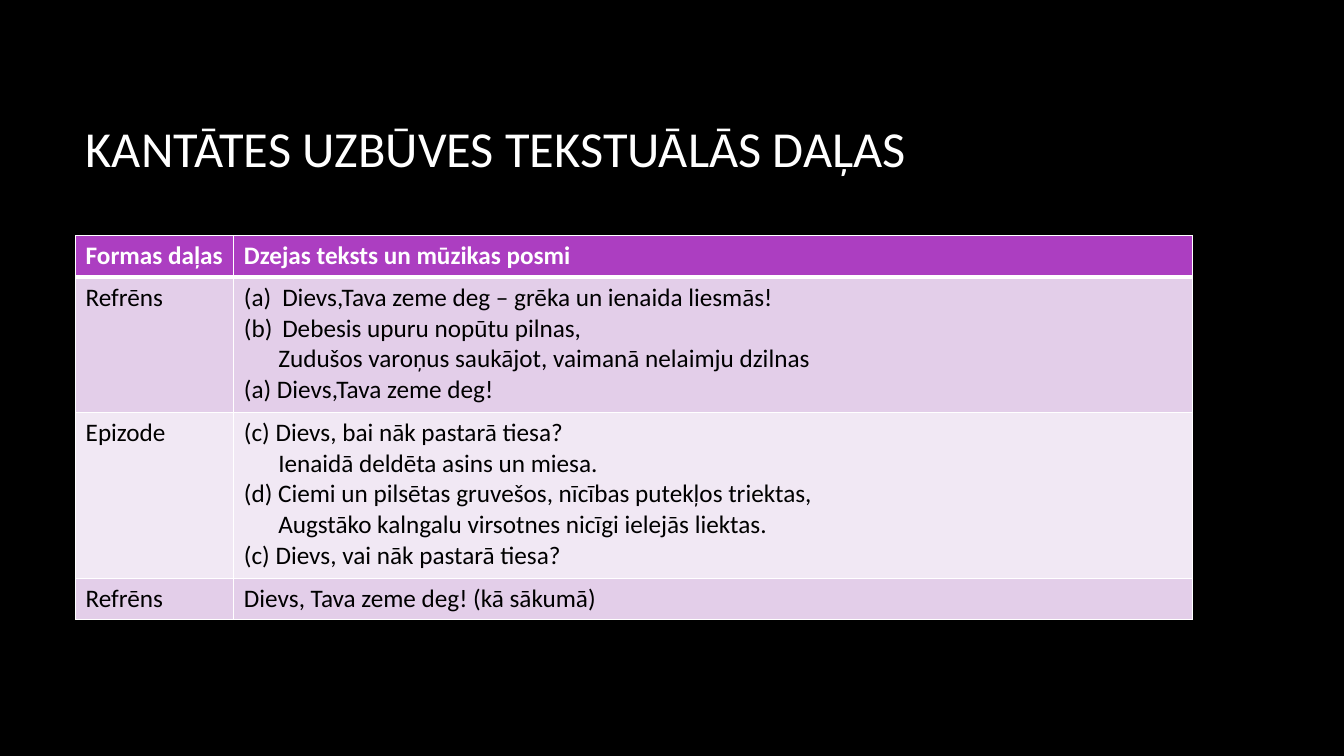
from dataclasses import dataclass

from lxml.etree import SubElement
from pptx import Presentation
from pptx.dml.color import RGBColor
from pptx.enum.text import MSO_ANCHOR, PP_ALIGN
from pptx.oxml.ns import qn
from pptx.util import Inches, Pt


@dataclass(frozen=True)
class Theme:
    font: str = "Calibri"
    background: str = "000000"
    light: str = "FFFFFF"
    dark: str = "000000"
    header: str = "AC3EC1"
    refrain: str = "E3CEE9"
    episode: str = "F1E8F4"
    title_size: int = 36
    body_size: int = 18
    border: int = 1
    header_border: int = 3


@dataclass(frozen=True)
class Line:
    text: str
    numbered: bool = False
    indented: bool = False


@dataclass(frozen=True)
class Section:
    label: str
    lines: tuple[Line, ...]
    fill: str
    is_header: bool = False


THEME = Theme()
LEFT, WIDTH = 0.75, 11.08
COLUMNS = (1.57, 9.51)
LINE_HEIGHT, CELL_MARGINS = 0.31, 0.1
NUMBER_INDENT, VERSE_INDENT = 0.38, 0.34

SECTIONS = (
    Section("Formas daļas", (Line("Dzejas teksts un mūzikas posmi"),),
            THEME.header, is_header=True),
    Section("Refrēns", (
        Line("Dievs,Tava zeme deg – grēka un ienaida liesmās!", numbered=True),
        Line("Debesis upuru nopūtu pilnas,", numbered=True),
        Line("Zudušos varoņus saukājot, vaimanā nelaimju dzilnas", indented=True),
        Line("(a) Dievs,Tava zeme deg!"),
    ), THEME.refrain),
    Section("Epizode", (
        Line("(c) Dievs, bai nāk pastarā tiesa?"),
        Line("Ienaidā deldēta asins un miesa.", indented=True),
        Line("(d) Ciemi un pilsētas gruvešos, nīcības putekļos triektas,"),
        Line("Augstāko kalngalu virsotnes nicīgi ielejās liektas.", indented=True),
        Line("(c) Dievs, vai nāk pastarā tiesa?"),
    ), THEME.episode),
    Section("Refrēns", (Line("Dievs, Tava zeme deg! (kā sākumā)"),), THEME.refrain),
)


def write(paragraph, text: str, *, size: int, color: str, bold: bool = False) -> None:
    paragraph.alignment = PP_ALIGN.LEFT
    run = paragraph.add_run()
    run.text = text
    run.font.name = THEME.font
    run.font.size = Pt(size)
    run.font.bold = bold
    run.font.color.rgb = RGBColor.from_string(color)


def indent(paragraph, line: Line) -> None:
    properties = paragraph._p.get_or_add_pPr()
    if line.numbered:
        properties.set("marL", str(Inches(NUMBER_INDENT)))
        properties.set("indent", str(-Inches(NUMBER_INDENT)))
        SubElement(properties, qn("a:buAutoNum"), type="alphaLcParenBoth")
    elif line.indented:
        properties.set("marL", str(Inches(VERSE_INDENT)))
        properties.set("indent", "0")


def draw_borders(cell, top: int, bottom: int) -> None:
    properties = cell._tc.get_or_add_tcPr()
    widths = {"lnL": THEME.border, "lnR": THEME.border, "lnT": top, "lnB": bottom}
    for side, width in widths.items():
        edge = SubElement(properties, qn(f"a:{side}"), w=str(Pt(width)))
        solid = SubElement(edge, qn("a:solidFill"))
        SubElement(solid, qn("a:srgbClr"), val=THEME.light)


def fill_cell(cell, lines: tuple[Line, ...], section: Section) -> None:
    frame = cell.text_frame
    for index, line in enumerate(lines):
        paragraph = frame.add_paragraph() if index else frame.paragraphs[0]
        indent(paragraph, line)
        write(paragraph, line.text, size=THEME.body_size, bold=section.is_header,
              color=THEME.light if section.is_header else THEME.dark)
    cell.fill.solid()
    cell.fill.fore_color.rgb = RGBColor.from_string(section.fill)


def add_title(slide, text: str) -> None:
    title = slide.shapes.title
    title.left, title.top = Inches(LEFT), Inches(0.67)
    title.width, title.height = Inches(WIDTH), Inches(1.59)
    title.text_frame.vertical_anchor = MSO_ANCHOR.MIDDLE
    write(title.text_frame.paragraphs[0], text,
          size=THEME.title_size, color=THEME.light)


def add_sections(slide, sections: tuple[Section, ...]) -> None:
    heights = [LINE_HEIGHT * len(section.lines) + CELL_MARGINS for section in sections]
    table = slide.shapes.add_table(
        len(sections), len(COLUMNS), Inches(LEFT), Inches(2.34),
        Inches(WIDTH), Inches(sum(heights))).table
    for column, width in zip(table.columns, COLUMNS):
        column.width = Inches(width)
    for index, (section, height) in enumerate(zip(sections, heights)):
        table.rows[index].height = Inches(height)
        top = THEME.header_border if index == 1 else THEME.border
        bottom = THEME.header_border if section.is_header else THEME.border
        for column, lines in enumerate(((Line(section.label),), section.lines)):
            cell = table.cell(index, column)
            draw_borders(cell, top, bottom)
            fill_cell(cell, lines, section)


def main() -> None:
    deck = Presentation()
    deck.slide_width, deck.slide_height = Inches(13.33), Inches(7.5)
    slide = deck.slides.add_slide(deck.slide_layouts[5])
    slide.background.fill.solid()
    slide.background.fill.fore_color.rgb = RGBColor.from_string(THEME.background)
    add_title(slide, "KANTĀTES UZBŪVES TEKSTUĀLĀS DAĻAS")
    add_sections(slide, SECTIONS)
    deck.save("out.pptx")


if __name__ == "__main__":
    main()
